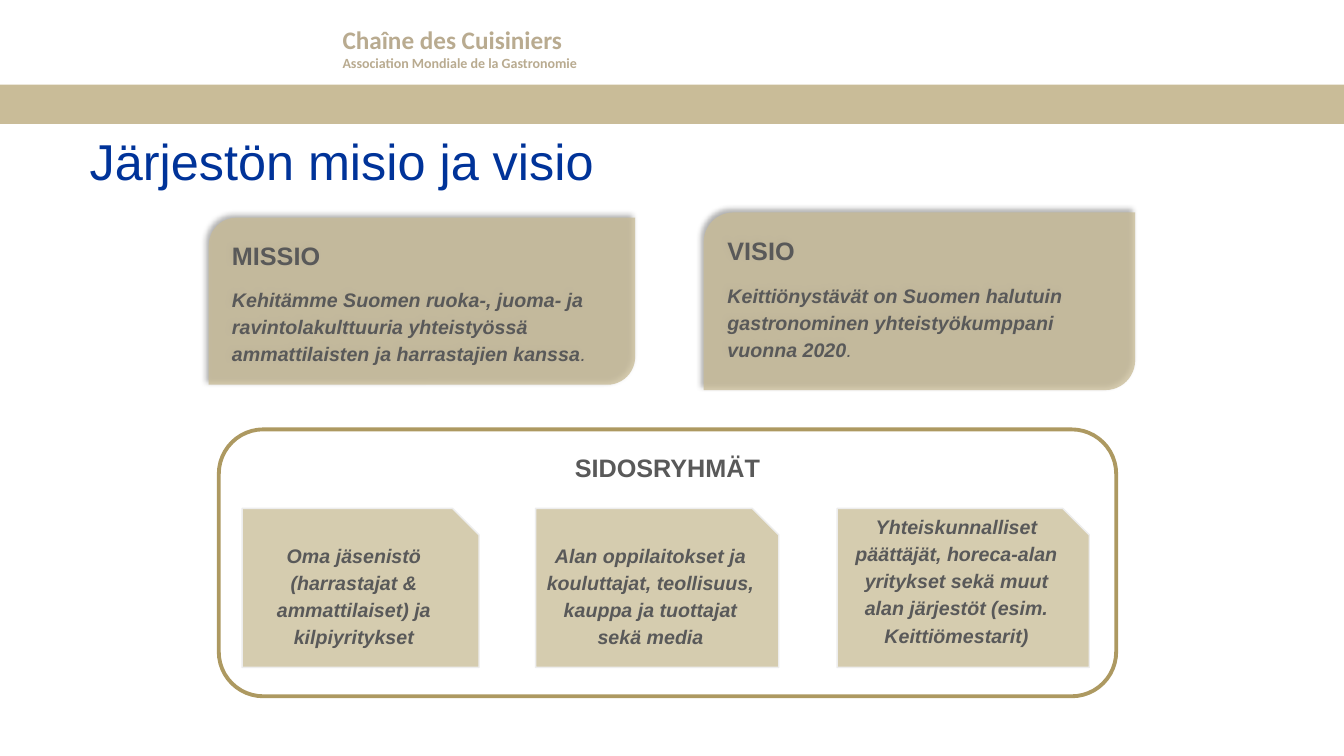
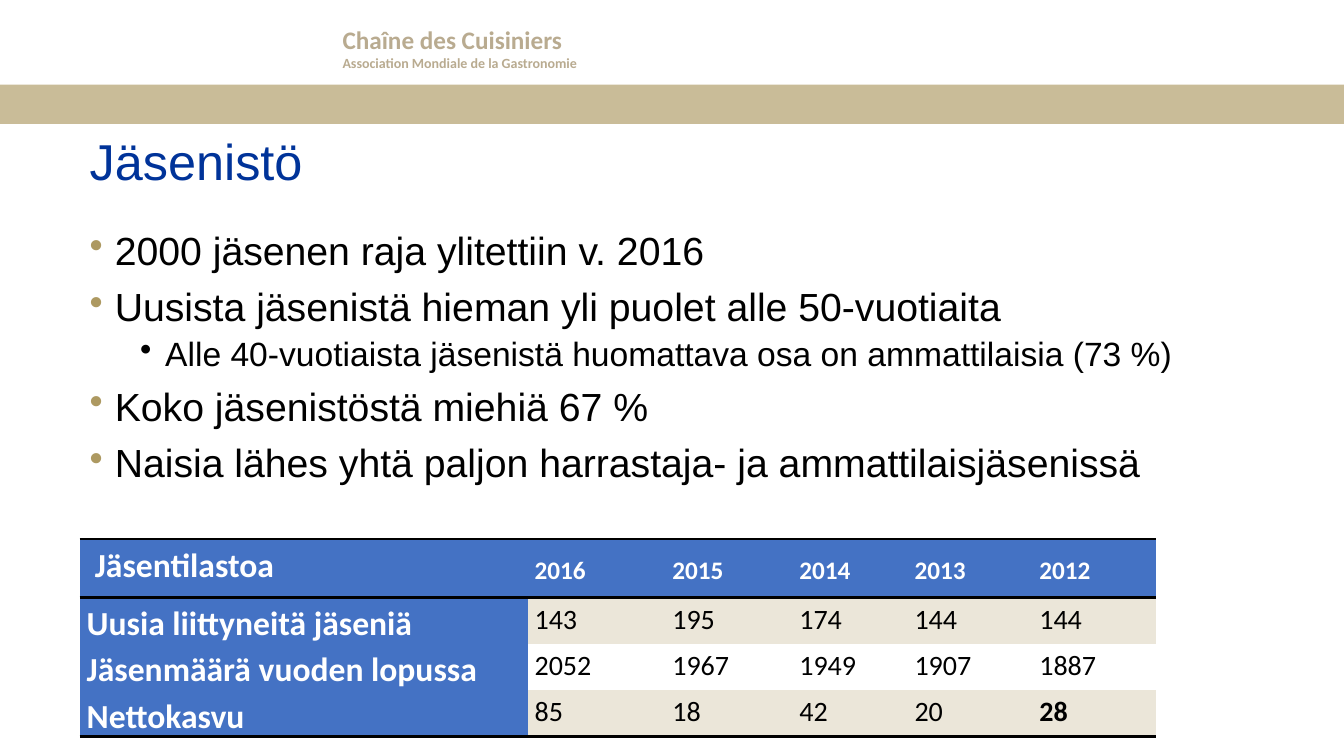
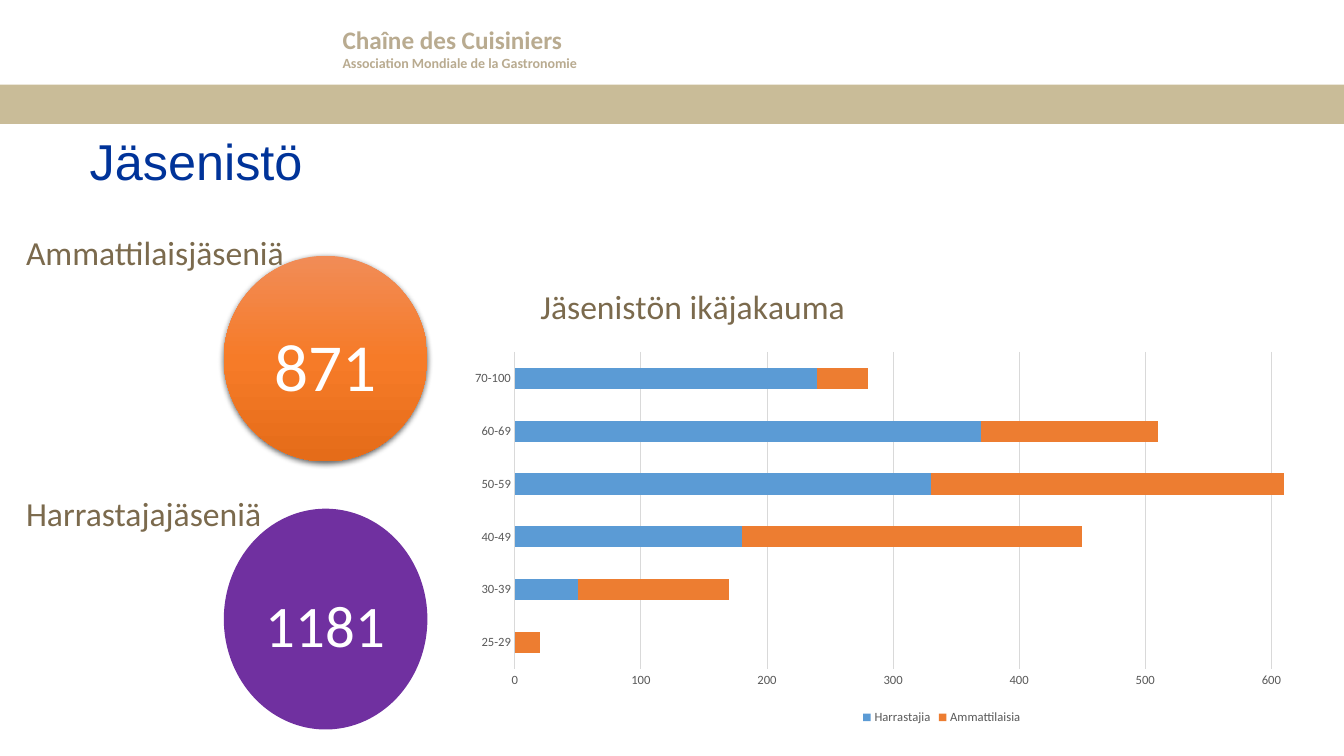
from copy import deepcopy
from dataclasses import dataclass

from lxml.etree import SubElement
from pptx import Presentation
from pptx.chart.data import CategoryChartData
from pptx.dml.color import RGBColor
from pptx.enum.chart import XL_CHART_TYPE as Chart, XL_LEGEND_POSITION as Legend, XL_TICK_MARK as Tick
from pptx.enum.shapes import MSO_SHAPE as Shape
from pptx.enum.text import MSO_ANCHOR as Anchor, PP_ALIGN as Align
from pptx.oxml import parse_xml
from pptx.oxml.ns import nsdecls, qn
from pptx.util import Inches, Pt

GOLD = RGBColor(0xAD, 0x99, 0x61)
SAND = RGBColor(0xC9, 0xBC, 0x97)
HEADER_SAND = RGBColor(0xB9, 0xAB, 0x90)
CREAM = RGBColor(0xEB, 0xE6, 0xD9)
BROWN = RGBColor(0x7B, 0x6A, 0x4D)
NAVY = RGBColor(0x00, 0x33, 0x99)
TABLE_BLUE = RGBColor(0x44, 0x72, 0xC4)
BAR_BLUE = RGBColor(0x5B, 0x9B, 0xD5)
BAR_ORANGE = RGBColor(0xED, 0x7D, 0x31)
PURPLE = RGBColor(0x70, 0x30, 0xA0)
ORANGES = [RGBColor(0xF1, 0x8C, 0x57), RGBColor(0xF6, 0x7B, 0x28), RGBColor(0xE5, 0x6C, 0x19)]
GREY = RGBColor(0x59, 0x59, 0x59)
GRID_GREY = RGBColor(0xD9, 0xD9, 0xD9)
PALE_GREY = RGBColor(0xED, 0xED, 0xED)
WHITE = RGBColor(0xFF, 0xFF, 0xFF)
BLACK = RGBColor(0, 0, 0)
NO_STYLE = "{2D5ABB26-0587-4C30-8999-92F81FD0307C}"


@dataclass
class Box:
    left: float
    top: float
    width: float
    height: float

    def percent(self, left, top, width, height):
        return Box(self.left + self.width * left / 100, self.top + self.height * top / 100,
                   self.width * width / 100, self.height * height / 100)

    def emu(self):
        return [Inches(v) for v in (self.left, self.top, self.width, self.height)]


PAGE = Box(0, 0, 13.33, 7.5)


def style(font, size, color, name="Calibri", bold=False, italic=False):
    font.size, font.name, font.bold, font.italic = Pt(size), name, bold, italic
    font.color.rgb = color


def write(tf, text, first=False, align=Align.LEFT, spacing=1.0, before=0, after=0,
          bullet=None, indent=0, **font):
    p = tf.paragraphs[0] if first else tf.add_paragraph()
    p.alignment, p.line_spacing = align, spacing
    p.space_before, p.space_after = Pt(0 if first else before), Pt(after)
    if bullet is not None:
        pPr = p._p.get_or_add_pPr()
        pPr.set("marL", str(Inches(indent)))
        pPr.set("indent", str(Inches(-0.25)))
        color = SubElement(pPr, qn("a:buClr"))
        SubElement(color, qn("a:srgbClr"), val=str(bullet))
        SubElement(pPr, qn("a:buChar"), char="•")
    r = p.add_run()
    r.text = text
    style(r.font, **font)
    return p


def frame(s, box, wrap=True):
    tf = s.shapes.add_textbox(*box.emu()).text_frame
    tf.word_wrap = wrap
    return tf


def add_shape(s, kind, box, fill=None, alpha=100, line=None, width=1, shadow=None):
    sp = s.shapes.add_shape(kind, *box.emu())
    sp.shadow.inherit = False
    if fill is None:
        sp.fill.background()
    else:
        sp.fill.solid()
        sp.fill.fore_color.rgb = fill
        color = sp.element.spPr.find(f"{qn('a:solidFill')}/{qn('a:srgbClr')}")
        SubElement(color, qn("a:alpha"), val=str(alpha * 1000))
    if line is None:
        sp.line.fill.background()
    else:
        sp.line.color.rgb, sp.line.width = line, Pt(width)
    if shadow:
        opacity, blur, dist, angle = shadow
        sp.element.spPr.find(qn("a:effectLst")).append(parse_xml(
            f'<a:outerShdw {nsdecls("a")} blurRad="{Pt(blur)}" dist="{Pt(dist)}" dir="{angle * 60000}" '
            f'rotWithShape="0"><a:srgbClr val="000000"><a:alpha val="{opacity * 1000}"/>'
            '</a:srgbClr></a:outerShdw>'))
    sp.text_frame.word_wrap = True
    return sp


def new_slide(prs, title):
    s = prs.slides.add_slide(prs.slide_layouts[6])
    add_shape(s, Shape.RECTANGLE, PAGE.percent(0, 11.2, 100, 5.2), GOLD, 65)
    tf = frame(s, PAGE.percent(24.75, 2.5, 50, 7.6))
    write(tf, "Chaîne des Cuisiniers", first=True, size=18, color=HEADER_SAND, bold=True)
    write(tf, "Association Mondiale de la Gastronomie", size=10, color=HEADER_SAND, bold=True)
    tf = frame(s, PAGE.percent(5.93, 17.5, 86.3, 11.6))
    write(tf, title, first=True, spacing=0.9, size=36, color=NAVY, name="Arial")
    return s


def statement(s, box, heading, text):
    tf = add_shape(s, Shape.ROUND_2_DIAG_RECTANGLE, box, SAND, 77, shadow=(40, 4, 3, 225)).text_frame
    tf.margin_left, tf.margin_top, tf.margin_bottom = Inches(0.15), Inches(0.1), Inches(0.1)
    tf.vertical_anchor = Anchor.TOP
    fmt = dict(spacing=1.15, after=10, color=GREY, name="Arial", bold=True)
    write(tf, heading, first=True, size=18, **fmt)
    p = write(tf, text, size=14, italic=True, **fmt)
    r = p.add_run()
    r.text = "."
    style(r.font, 14, GREY, "Arial", italic=True)


def stakeholders(s, box):
    fmt = dict(first=True, align=Align.CENTER, spacing=1.15, color=GREY, name="Arial", bold=True)
    tf = add_shape(s, Shape.ROUNDED_RECTANGLE, box, line=GOLD, width=2.75).text_frame
    tf.vertical_anchor = Anchor.TOP
    write(tf, "SIDOSRYHMÄT", size=18, **fmt)
    groups = [
        (2.6, 26.4, 0.05, "Oma jäsenistö (harrastajat & ammattilaiset) ja kilpiyritykset"),
        (35.3, 27.1, 0.05, "Alan oppilaitokset ja kouluttajat, teollisuus, kauppa ja tuottajat sekä media"),
        (68.9, 28.1, 0.35, "Yhteiskunnalliset päättäjät, horeca-alan yritykset sekä muut alan järjestöt "
                           "(esim. Keittiömestarit)"),
    ]
    for left, width, bottom, text in groups:
        sp = add_shape(s, Shape.SNIP_1_RECTANGLE, box.percent(left, 29.6, width, 59.6), SAND, 76, PALE_GREY)
        tf = sp.text_frame
        tf.vertical_anchor, tf.margin_bottom = Anchor.MIDDLE, Inches(bottom)
        write(tf, text, size=14, italic=True, **fmt)


def bullet_list(s, box, items):
    tf = frame(s, box)
    for i, (level, text) in enumerate(items):
        write(tf, text, first=i == 0, spacing=0.9, before=5 if level else 10,
              bullet=BLACK if level else GOLD, indent=0.25 + 0.5 * level,
              size=24 if level else 28, color=BLACK, name="Arial")


def rule(cell, side):
    cell._tc.get_or_add_tcPr().insert(0, parse_xml(
        f'<a:{side} {nsdecls("a")} w="{Pt(2)}"><a:solidFill><a:srgbClr val="000000"/>'
        f'</a:solidFill></a:{side}>'))


def statistics(s, box, rows, widths, heights):
    table = s.shapes.add_table(len(rows), len(widths), *box.emu()).table
    table._tbl.tblPr.find(qn("a:tableStyleId")).text = NO_STYLE
    for col, share in zip(table.columns, widths):
        col.width = Inches(box.width * share / 100)
    for row, share in zip(table.rows, heights):
        row.height = Inches(box.height * share / 100)
    last = len(rows) - 1, len(widths) - 1
    for i, row in enumerate(rows):
        for j, text in enumerate(row):
            cell = table.cell(i, j)
            head = i == 0 or j == 0
            cell.margin_left = Inches(0.15 if i == j == 0 else 0.07)
            cell.margin_right = Inches(0.07)
            cell.margin_top = cell.margin_bottom = 0
            cell.vertical_anchor = Anchor.MIDDLE if i == 0 and j else Anchor.TOP
            cell.fill.solid()
            cell.fill.fore_color.rgb = TABLE_BLUE if head else CREAM if i % 2 else WHITE
            write(cell.text_frame, text, first=True, spacing=1.15,
                  size=24 if j == 0 else 18 if i == 0 else 20,
                  color=WHITE if head else BLACK, bold=head or (i, j) == last)
            if i in (0, last[0]):
                rule(cell, "lnB")
            if i == 0:
                rule(cell, "lnT")


def member_counts(s, box):
    counts = [("Ammattilaisjäseniä", "871", 48, 0, 6.9, 40.4, (63, 4.5, 1.5, 90)),
              ("Harrastajajäseniä", "1181", 42, 51.3, 56.6, 43.4, None)]
    for label, number, size, label_top, top, height, shadow in counts:
        sp = add_shape(s, Shape.OVAL, box.percent(50.5, top, 49.5, height), PURPLE, shadow=shadow)
        if shadow:
            shade(sp, ORANGES)
        sp.text_frame.vertical_anchor = Anchor.MIDDLE
        write(sp.text_frame, number, first=True, align=Align.CENTER, spacing=1.15, size=size, color=WHITE)
        tf = frame(s, box.percent(0, label_top, 68.4, 10.7), wrap=False)
        write(tf, label, first=True, spacing=1.15, size=24, color=BROWN)


def shade(sp, colors):
    sp.fill.gradient()
    sp.fill.gradient_angle = 270
    stops = sp.element.spPr.find(f".//{qn('a:gsLst')}")
    stops.append(deepcopy(stops[0]))
    for i, (stop, color) in enumerate(zip(sp.fill.gradient_stops, colors)):
        stop.position = i / (len(colors) - 1)
        stop.color.rgb = color


def layout_xml(x, y, width=None, height=None):
    size = f'<c:w val="{width}"/><c:h val="{height}"/>' if width else ""
    target = '<c:layoutTarget val="inner"/>' if width else ""
    return parse_xml(f'<c:layout {nsdecls("c")}><c:manualLayout>{target}<c:xMode val="edge"/>'
                     f'<c:yMode val="edge"/><c:x val="{x}"/><c:y val="{y}"/>{size}'
                     '</c:manualLayout></c:layout>')


def place(element, layout, index):
    for old in element.findall(qn("c:layout")):
        element.remove(old)
    element.insert(index, layout)


def age_chart(s, box):
    data = CategoryChartData()
    data.categories = ["25-29", "30-39", "40-49", "50-59", "60-69", "70-100"]
    data.add_series("Harrastajia", [0, 50, 180, 330, 370, 240])
    data.add_series("Ammattilaisia", [20, 120, 270, 280, 140, 40])
    chart = s.shapes.add_chart(Chart.BAR_STACKED, *box.emu(), data).chart
    style(chart.font, 10, BLACK)
    chart.has_title = True
    write(chart.chart_title.text_frame, "Jäsenistön ikäjakauma", first=True, size=24, color=BROWN)
    chart.chart_title.include_in_layout = False
    place(chart.chart_title._element, layout_xml(0.08, 0.02), 1)
    place(chart._chartSpace.chart.plotArea, layout_xml(0.06, 0.18, 0.91, 0.69), 0)

    plot = chart.plots[0]
    plot.vary_by_categories, plot.gap_width, plot.overlap = False, 150, 100
    for series, color in zip(plot.series, (BAR_BLUE, BAR_ORANGE)):
        series.format.fill.solid()
        series.format.fill.fore_color.rgb = color
    for axis in (chart.category_axis, chart.value_axis):
        axis.major_tick_mark = axis.minor_tick_mark = Tick.NONE
        axis.format.line.fill.background()
        style(axis.tick_labels.font, 9, GREY)
    values = chart.value_axis
    values.minimum_scale, values.maximum_scale, values.major_unit = 0, 700, 100
    grid = values.major_gridlines.format.line
    grid.color.rgb, grid.width = GRID_GREY, Pt(0.75)
    chart.has_legend = True
    chart.legend.position, chart.legend.include_in_layout = Legend.BOTTOM, False
    style(chart.legend.font, 9, GREY)


def mission_slide(prs):
    s = new_slide(prs, "Järjestön misio ja visio")
    statement(s, PAGE.percent(15.53, 28.8, 31.73, 22.1), "MISSIO",
              "Kehitämme Suomen ruoka-, juoma- ja ravintolakulttuuria yhteistyössä "
              "ammattilaisten ja harrastajien kanssa")
    statement(s, PAGE.percent(52.36, 28.1, 32.1, 23.5), "VISIO",
              "Keittiönystävät on Suomen halutuin gastronominen yhteistyökumppani vuonna 2020")
    stakeholders(s, PAGE.percent(16.28, 56.8, 66.77, 35.3))


def members_slide(prs):
    s = new_slide(prs, "Jäsenistö")
    bullet_list(s, PAGE.percent(5.93, 30, 87.2, 40.4), [
        (0, "2000 jäsenen raja ylitettiin v. 2016"),
        (0, "Uusista jäsenistä hieman yli puolet alle 50-vuotiaita"),
        (1, "Alle 40-vuotiaista jäsenistä huomattava osa on ammattilaisia (73 %)"),
        (0, "Koko jäsenistöstä miehiä 67 %"),
        (0, "Naisia lähes yhtä paljon harrastaja- ja ammattilaisjäsenissä"),
    ])
    statistics(s, PAGE.percent(5.93, 71.3, 80.1, 24.9), [
        ["Jäsentilastoa", "2016", "2015", "2014", "2013", "2012"],
        ["Uusia liittyneitä jäseniä", "143", "195", "174", "144", "144"],
        ["Jäsenmäärä vuoden lopussa", "2052", "1967", "1949", "1907", "1887"],
        ["Nettokasvu", "85", "18", "42", "20", "28"],
    ], widths=[41.6, 12.8, 11.8, 10.7, 11.6, 11.5], heights=[31, 23, 23, 23])


def ages_slide(prs):
    s = new_slide(prs, "Jäsenistö")
    age_chart(s, PAGE.percent(33.98, 35.6, 72.17, 60.8))
    member_counts(s, PAGE.percent(1.2, 29.2, 30.6, 67.3))


def main():
    prs = Presentation()
    prs.slide_width, prs.slide_height = Inches(PAGE.width), Inches(PAGE.height)
    for build in (mission_slide, members_slide, ages_slide):
        build(prs)
    prs.save("out.pptx")


if __name__ == "__main__":
    main()
